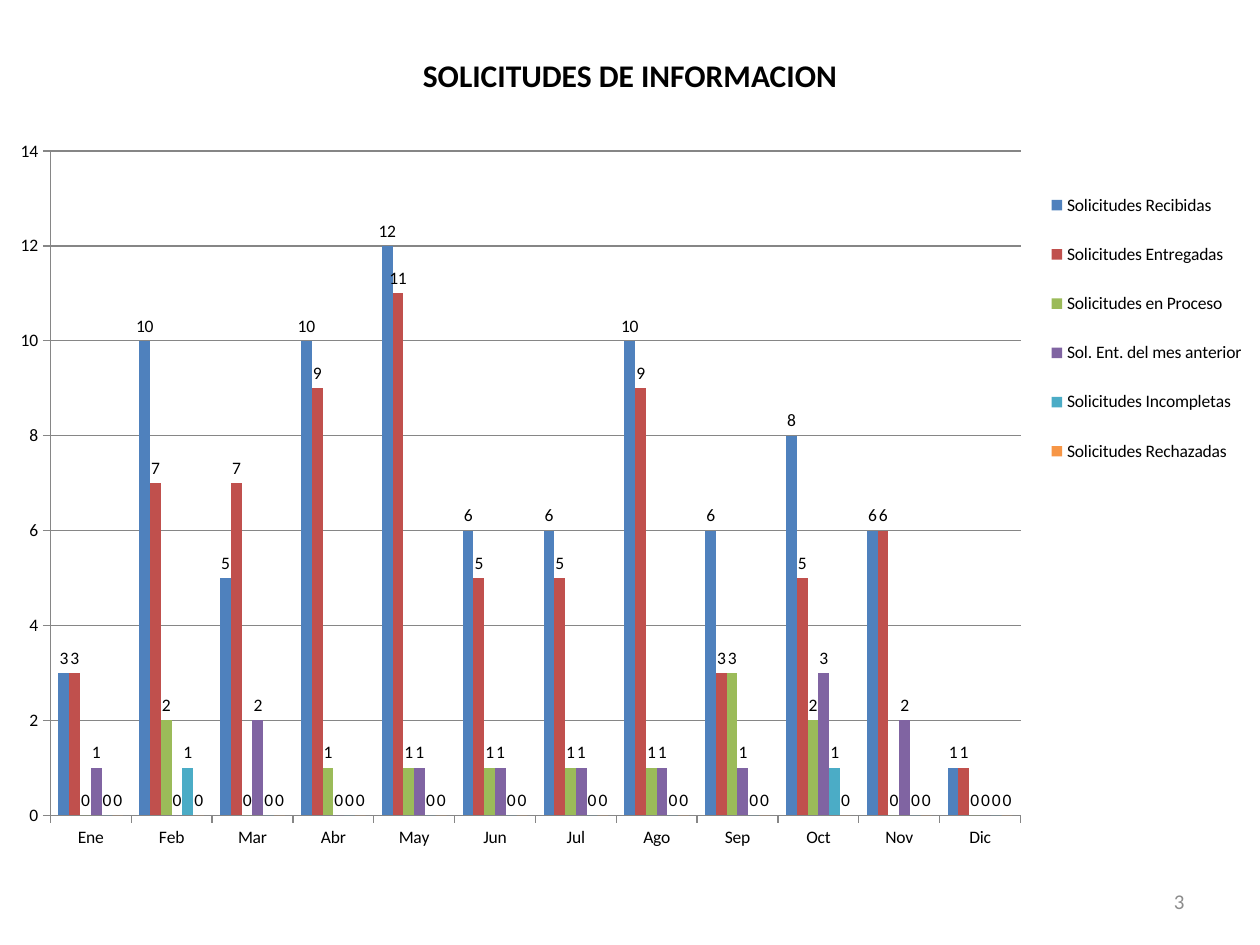
from pptx import Presentation
from pptx.chart.data import CategoryChartData as Data
from pptx.dml.color import RGBColor as Rgb
from pptx.enum.chart import XL_CHART_TYPE as Kind, XL_LABEL_POSITION as Spot
from pptx.enum.chart import XL_LEGEND_POSITION as Side, XL_TICK_MARK as Tick
from pptx.enum.text import MSO_ANCHOR as Anchor, PP_ALIGN as Align
from pptx.oxml import parse_xml
from pptx.oxml.ns import nsdecls
from pptx.util import Cm, Pt

TITLE = "SOLICITUDES DE INFORMACION"
PAGE = "3"
MONTHS = ["Ene", "Feb", "Mar", "Abr", "May", "Jun",
          "Jul", "Ago", "Sep", "Oct", "Nov", "Dic"]
SERIES = [
    ("Solicitudes Recibidas ", "4F81BD", [3, 10, 5, 10, 12, 6, 6, 10, 6, 8, 6, 1]),
    ("Solicitudes Entregadas", "C0504D", [3, 7, 7, 9, 11, 5, 5, 9, 3, 5, 6, 1]),
    ("Solicitudes en Proceso", "9BBB59", [0, 2, 0, 1, 1, 1, 1, 1, 3, 2, 0, 0]),
    ("Sol. Ent. del mes anterior", "8064A2", [1, 0, 2, 0, 1, 1, 1, 1, 1, 3, 2, 0]),
    ("Solicitudes Incompletas", "4BACC6", [0, 1, 0, 0, 0, 0, 0, 0, 0, 1, 0, 0]),
    ("Solicitudes Rechazadas", "F79646", [0] * 12),
]
THEME = dict(font="Calibri", ink="000000", mute="8C8C8C", rule="868686",
             title=18, page=12, chart=10)
# Shares of the chart frame: left, top, width, height
PLOT = (0.04, 0.03, 0.77, 0.9)
LEGEND = (0.82, 0.05, 0.18, 0.44)


def style(font, size, color, bold=False):
    font.name, font.size, font.bold = THEME["font"], Pt(THEME[size]), bold
    font.color.rgb = Rgb.from_string(THEME[color])


def add_text(slide, text, box, align, size, color, bold=False, anchor=Anchor.TOP):
    frame = slide.shapes.add_textbox(*map(Cm, box)).text_frame
    frame.word_wrap, frame.vertical_anchor = True, anchor
    par = frame.paragraphs[0]
    par.text, par.alignment = text, align
    style(par.font, size, color, bold)


def layout(box, inner=False):
    """Return a manual chart layout for a box given in shares of the frame."""
    target = '<c:layoutTarget val="inner"/>' if inner else ""
    modes = "".join(f'<c:{k}Mode val="edge"/>' for k in "xy")
    sizes = "".join(f'<c:{k} val="{v}"/>' for k, v in zip("xywh", box))
    return parse_xml(f'<c:layout {nsdecls("c")}><c:manualLayout>{target}'
                     f'{modes}{sizes}</c:manualLayout></c:layout>')


def place(chart):
    root = chart.element
    for old in root.xpath("//c:plotArea/c:layout | //c:legend/c:layout"):
        old.getparent().remove(old)
    root.xpath("//c:plotArea")[0].insert(0, layout(PLOT, inner=True))
    root.xpath("//c:legend/c:overlay")[0].addprevious(layout(LEGEND))


def rule(line):
    line.color.rgb, line.width = Rgb.from_string(THEME["rule"]), Pt(0.75)


def add_bars(slide, box):
    data = Data()
    data.categories = MONTHS
    for name, _, vals in SERIES:
        data.add_series(name, vals)
    chart = slide.shapes.add_chart(Kind.COLUMN_CLUSTERED, *map(Cm, box), data).chart
    chart.has_title = False
    style(chart.font, "chart", "ink")

    plot = chart.plots[0]
    plot.gap_width, plot.overlap, plot.vary_by_categories = 150, 0, False
    for series, (_, color, _) in zip(plot.series, SERIES):
        series.format.fill.solid()
        series.format.fill.fore_color.rgb = Rgb.from_string(color)
        series.invert_if_negative = False
        labels = series.data_labels
        labels.show_value, labels.position = True, Spot.OUTSIDE_END
        style(labels.font, "chart", "ink")

    for axis in (chart.category_axis, chart.value_axis):
        axis.major_tick_mark, axis.minor_tick_mark = Tick.OUTSIDE, Tick.NONE
        rule(axis.format.line)
    scale = chart.value_axis
    scale.minimum_scale, scale.maximum_scale, scale.major_unit = 0, 14, 2
    scale.has_major_gridlines = True
    rule(scale.major_gridlines.format.line)

    chart.has_legend = True
    chart.legend.position = Side.RIGHT
    chart.legend.include_in_layout = False
    place(chart)


def main():
    deck = Presentation()
    deck.slide_width, deck.slide_height = Cm(25.4), Cm(19.05)
    slide = deck.slides.add_slide(deck.slide_layouts[6])
    add_text(slide, PAGE, (18.2, 17.65, 5.93, 1.02), Align.RIGHT,
             "page", "mute", anchor=Anchor.MIDDLE)
    add_text(slide, TITLE, (7.75, 1, 9.9, 1.02), Align.CENTER,
             "title", "ink", bold=True)
    add_bars(slide, (0, 2.6, 25.4, 14.88))
    deck.save("out.pptx")


if __name__ == "__main__":
    main()
